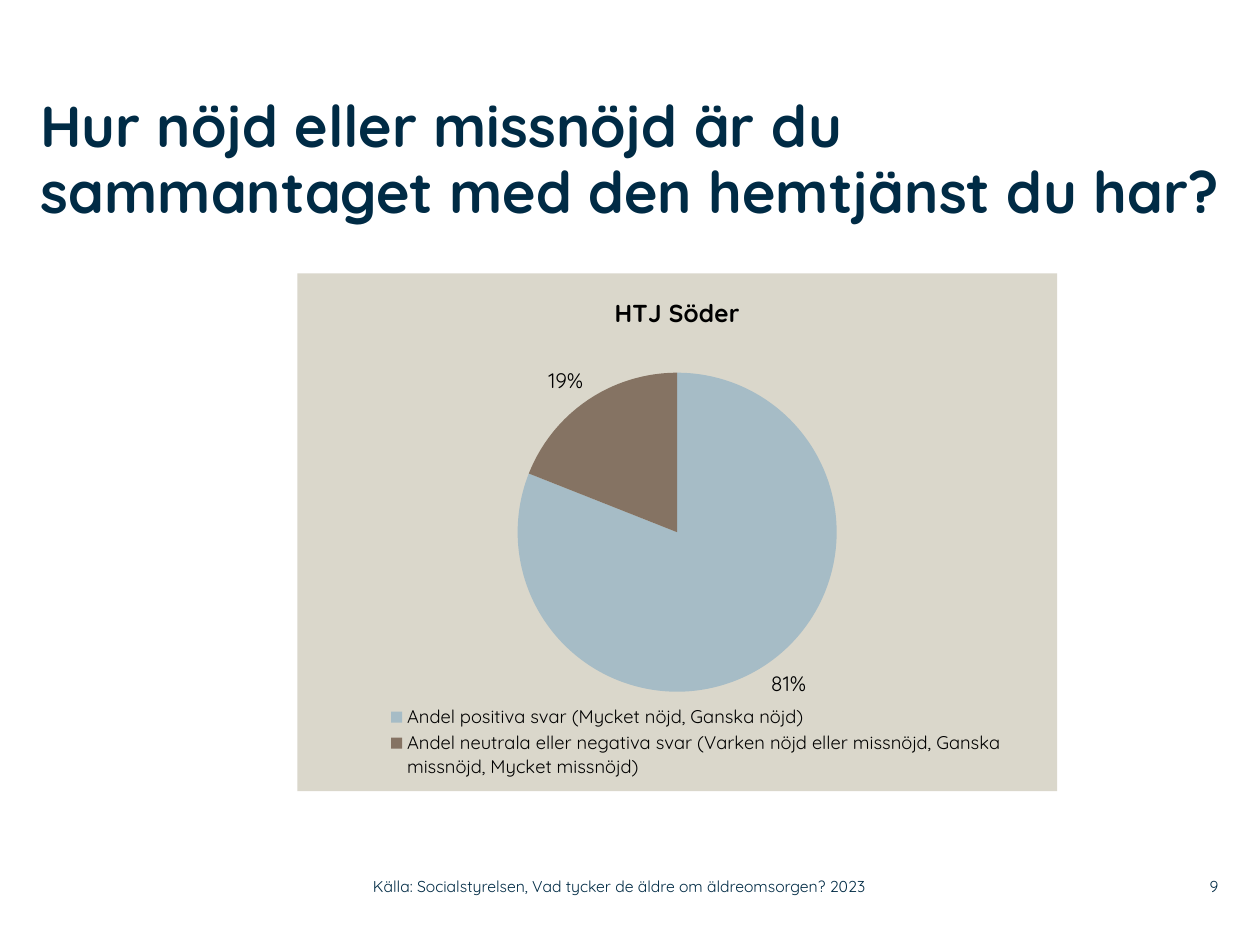
from lxml import etree
from pptx import Presentation
from pptx.chart.data import CategoryChartData
from pptx.dml.color import RGBColor
from pptx.enum.chart import XL_CHART_TYPE, XL_LABEL_POSITION, XL_LEGEND_POSITION
from pptx.enum.text import MSO_ANCHOR, PP_ALIGN
from pptx.oxml import parse_xml
from pptx.oxml.ns import nsdecls, qn
from pptx.util import Inches, Pt

PIE = XL_CHART_TYPE.PIE
OUTSIDE_END = XL_LABEL_POSITION.OUTSIDE_END
BOTTOM = XL_LEGEND_POSITION.BOTTOM
TOP, MIDDLE = MSO_ANCHOR.TOP, MSO_ANCHOR.MIDDLE
LEFT, RIGHT = PP_ALIGN.LEFT, PP_ALIGN.RIGHT

FONT = "Quicksand"
COLORS = {
    "navy": "002B45",
    "black": "000000",
    "panel": "DAD7CB",
    "positive": "A6BCC6",
    "negative": "857363",
}


def style_font(font, size, color, bold=False):
    values = {"name": FONT, "size": Pt(size), "bold": bold}
    for name, value in values.items():
        setattr(font, name, value)
    font.color.rgb = RGBColor.from_string(COLORS[color])


def manual_layout(x, y, width, height, inner=False):
    layout = parse_xml(f"<c:layout {nsdecls('c')}><c:manualLayout/></c:layout>")
    settings = {"layoutTarget": "inner"} if inner else {}
    settings.update(xMode="edge", yMode="edge", x=x, y=y, w=width, h=height)
    for tag, value in settings.items():
        etree.SubElement(layout[0], qn(f"c:{tag}")).set("val", str(value))
    return layout


presentation = Presentation()
presentation.slide_width = Inches(10)
presentation.slide_height = Inches(7.5)
slide = presentation.slides.add_slide(presentation.slide_layouts[6])

# Title, source line and page number
texts = [
    ("Hur nöjd eller missnöjd är du\vsammantaget med den hemtjänst du har?",
     (0.32, 0.75, 9.51, 1.42), 33, True, TOP, LEFT, 0.95),
    ("Källa: Socialstyrelsen, Vad tycker de äldre om äldreomsorgen? 2023",
     (2.96, 6.89, 4.43, 0.29), 9, False, MIDDLE, LEFT, 1.0),
    ("9", (9.2, 6.89, 0.47, 0.29), 9, False, MIDDLE, RIGHT, 1.0),
]
for text, box, size, bold, anchor, alignment, spacing in texts:
    shape = slide.shapes.add_textbox(*map(Inches, box))
    frame_format = {
        "word_wrap": True, "vertical_anchor": anchor,
        "margin_left": 0, "margin_right": 0, "margin_top": 0, "margin_bottom": 0,
    }
    for name, value in frame_format.items():
        setattr(shape.text_frame, name, value)
    paragraph = shape.text_frame.paragraphs[0]
    paragraph.text = text
    paragraph.alignment = alignment
    paragraph.line_spacing = spacing
    for run in paragraph.runs:
        style_font(run.font, size, "navy", bold)

# Pie chart
chart_data = CategoryChartData()
chart_data.categories = [
    "Andel positiva svar (Mycket nöjd, Ganska nöjd)",
    "Andel neutrala eller negativa svar (Varken nöjd eller missnöjd, "
    "Ganska missnöjd, Mycket missnöjd)",
]
chart_data.add_series("HTJ Söder", (81, 19))
chart_box = map(Inches, (2.36, 2.17, 6.03, 4.11))
chart = slide.shapes.add_chart(PIE, *chart_box, chart_data).chart
style_font(chart.font, 18, "black")

chart.has_title = True
title_paragraph = chart.chart_title.text_frame.paragraphs[0]
title_paragraph.text = "HTJ Söder"
style_font(title_paragraph.runs[0].font, 14, "black", True)

plot = chart.plots[0]
plot.vary_by_categories = True
for index, color in enumerate(("positive", "negative")):
    fill = plot.series[0].points[index].format.fill
    fill.solid()
    fill.fore_color.rgb = RGBColor.from_string(COLORS[color])

# Percent labels
plot.has_data_labels = True
label_format = {
    "show_percentage": True, "show_value": False, "position": OUTSIDE_END,
    "number_format": "0%", "number_format_is_linked": False,
}
for name, value in label_format.items():
    setattr(plot.data_labels, name, value)
style_font(plot.data_labels.font, 12, "black")

# Legend
chart.has_legend = True
chart.legend.position = BOTTOM
chart.legend.include_in_layout = False
style_font(chart.legend.font, 10.5, "black")

# Fixed places for the pie and the legend
chart_space = chart.element
plot_area = chart_space.find(".//" + qn("c:plotArea"))
legend = chart_space.find(".//" + qn("c:legend"))
for parent in (plot_area, legend):
    for layout in parent.findall(qn("c:layout")):
        parent.remove(layout)
plot_area.insert(0, manual_layout(0.29, 0.19, 0.42, 0.62, inner=True))
legend.find(qn("c:legendPos")).addnext(manual_layout(0.11, 0.83, 0.83, 0.15))

# Chart background
background = parse_xml(
    f"<c:spPr {nsdecls('c', 'a')}><a:solidFill>"
    f"<a:srgbClr val=\"{COLORS['panel']}\"/></a:solidFill>"
    "<a:ln><a:noFill/></a:ln></c:spPr>"
)
chart_space.find(qn("c:chart")).addnext(background)

presentation.save("out.pptx")
